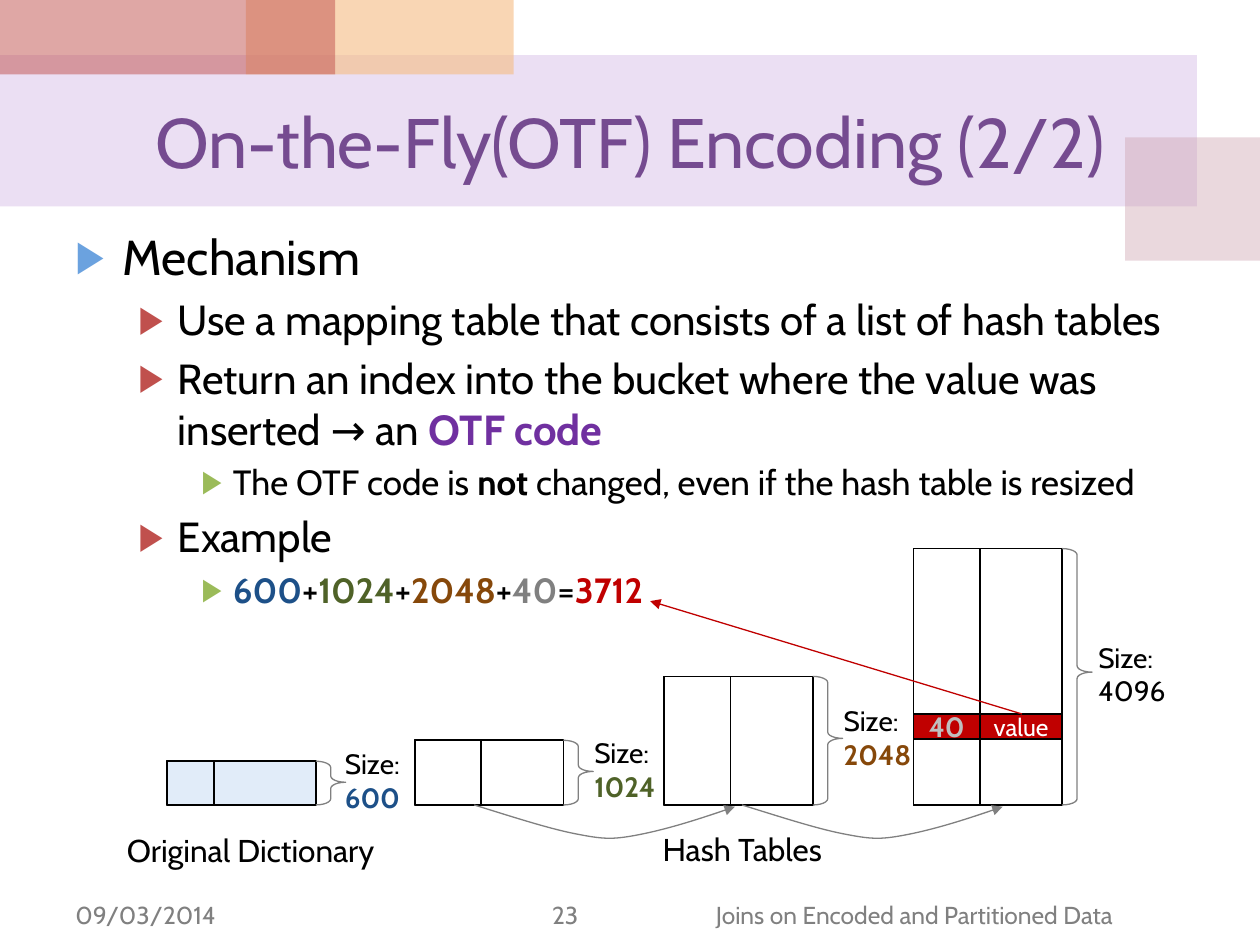
from lxml import etree
from pptx import Presentation
from pptx.dml.color import RGBColor
from pptx.enum.shapes import MSO_CONNECTOR as Connector, MSO_SHAPE as Shape
from pptx.enum.text import MSO_ANCHOR as Anchor, PP_ALIGN as Align
from pptx.oxml import parse_xml
from pptx.oxml.ns import nsdecls, qn
from pptx.util import Pt

FONT = "Cabin"
BLACK = RGBColor(0x00, 0x00, 0x00)
WHITE = RGBColor(0xFF, 0xFF, 0xFF)
GREY = RGBColor(0x80, 0x80, 0x80)
SILVER = RGBColor(0xBF, 0xBF, 0xBF)
PLUM = RGBColor(0x56, 0x2B, 0x71)
PURPLE = RGBColor(0x70, 0x30, 0xA0)
RED = RGBColor(0xC0, 0x00, 0x00)
BLUE = RGBColor(0x1D, 0x50, 0x88)
GREEN = RGBColor(0x4F, 0x62, 0x28)
BROWN = RGBColor(0x86, 0x48, 0x0A)
PALE_BLUE = RGBColor(0xE1, 0xEC, 0xF9)
LILAC = RGBColor(0xBF, 0x98, 0xD8)
ROSE = RGBColor(0xCC, 0x9E, 0xAC)
ORANGE = RGBColor(0xF5, 0xBC, 0x83)
BRICK = RGBColor(0xC0, 0x50, 0x4D)

deck = Presentation()
deck.slide_width, deck.slide_height = Pt(720), Pt(540)
page = deck.slides.add_slide(deck.slide_layouts[5])


def add_box(kind, left, top, width, height, fill=None, line=None, weight=1):
    box = page.shapes.add_shape(kind, Pt(left), Pt(top), Pt(width), Pt(height))
    box.shadow.inherit = False
    if fill is None:
        box.fill.background()
    else:
        box.fill.solid()
        box.fill.fore_color.rgb = fill
    if line is None:
        box.line.fill.background()
    else:
        box.line.color.rgb = line
        box.line.width = Pt(weight)
    return box


def write(frame, paragraphs, size, align=Align.LEFT):
    """Fill a frame; each paragraph is a list of (text, colour, bold) spans."""
    frame.word_wrap = True
    for number, spans in enumerate(paragraphs):
        para = frame.paragraphs[0] if number == 0 else frame.add_paragraph()
        para.alignment = align
        for text, colour, bold in spans:
            span = para.add_run()
            span.text = text
            span.font.name, span.font.size = FONT, Pt(size)
            span.font.color.rgb, span.font.bold = colour, bold


# Translucent background blocks
for left, top, width, height, colour, opacity in [
    (0, 31.5, 684, 86.5, LILAC, 30),
    (643, 78.5, 77, 70.5, ROSE, 40),
    (140.5, 0, 153, 42.5, ORANGE, 60),
    (0, 0, 191.5, 42.5, BRICK, 50),
]:
    block = add_box(Shape.RECTANGLE, left, top, width, height, colour)
    tint = block.fill._xPr.find(qn("a:solidFill"))[0]
    etree.SubElement(tint, qn("a:alpha")).set("val", str(opacity * 1000))

# Title
title = page.shapes.title
title.left, title.top, title.width, title.height = Pt(36), Pt(42.5), Pt(648), Pt(75.5)
title.text_frame.vertical_anchor = Anchor.MIDDLE
write(title.text_frame, [[("On-the-Fly(OTF) Encoding (2/2)", PLUM, False)]], 40, Align.CENTER)

# Bulleted text: level and spans
LEVELS = [  # size, text indent, hanging indent, bullet colour
    (28, 27, 27, "6BA2DF"),
    (24, 58.5, 22.5, "C0504D"),
    (20, 90, 18, "9BBB59"),
]
bullets = [
    (0, [("Mechanism", BLACK, False)]),
    (1, [("Use a mapping table that consists of a list of hash tables", BLACK, False)]),
    (1, [("Return an index into the bucket where the value was inserted → an ", BLACK, False),
         ("OTF code", PURPLE, True)]),
    (2, [("The OTF code is ", BLACK, False), ("not", BLACK, True),
         (" changed, even if the hash table is resized", BLACK, False)]),
    (1, [("Example", BLACK, False)]),
    (2, [("600", BLUE, True), ("+", BLACK, False), ("1024", GREEN, True), ("+", BLACK, False),
         ("2048", BROWN, True), ("+", BLACK, False), ("40", GREY, True), ("=", BLACK, False),
         ("3712", RED, True)]),
]
body = page.shapes.add_textbox(Pt(36), Pt(126), Pt(648), Pt(356.5))
write(body.text_frame, [spans for _, spans in bullets], 28)
for para, (level, _) in zip(body.text_frame.paragraphs, bullets):
    size, indent, hanging, bullet_colour = LEVELS[level]
    para.level = level
    para.space_before = Pt(size * 0.2)
    for span in para.runs:
        span.font.size = Pt(size)
    props = para._p.get_or_add_pPr()
    props.set("marL", str(Pt(indent)))
    props.set("indent", str(-Pt(hanging)))
    for tag, key, value in [("buClr", None, None), ("buSzPct", "val", "90000"),
                            ("buFont", "typeface", "Arial"), ("buChar", "char", "▶")]:
        mark = etree.SubElement(props, qn(f"a:{tag}"))
        if key:
            mark.set(key, value)
        else:
            etree.SubElement(mark, qn("a:srgbClr")).set("val", bullet_colour)

# Dictionary and hash tables, standing on one base line
BASE, TABLE_WIDTH = 460, 85
for left, height, key_width, fill, label_left, entries, colour, bold in [
    (95.5, 25, 27, PALE_BLUE, 190, "600", BLUE, True),
    (237, 37, 38, None, 332.5, "1024", GREEN, True),
    (379.5, 73.5, 38, None, 475, "2048", BROWN, True),
    (522, 146.5, 38, None, 620.5, "4096", BLACK, False),
]:
    top = BASE - height
    add_box(Shape.RECTANGLE, left, top, TABLE_WIDTH, height, fill, BLACK)
    add_box(Shape.RECTANGLE, left, top, key_width, height, fill, BLACK)
    brace = add_box(Shape.RIGHT_BRACE, left + TABLE_WIDTH, top, 17, height, None, GREY, 0.75)
    brace.adjustments[0], brace.adjustments[1] = 0.212, 0.482
    label = page.shapes.add_textbox(Pt(label_left), Pt(top + height / 2 - 24.5), Pt(63), Pt(46))
    write(label.text_frame, [[("Size:", BLACK, False)], [(entries, colour, bold)]], 16)

# Row that holds the encoded value
for left, width, text, size, colour, bold in [
    (522, 38, "40", 16, SILVER, True),
    (560, 47, "value", 14, WHITE, False),
]:
    cell = add_box(Shape.RECTANGLE, left, 408, width, 14.5, RED, BLACK)
    cell.text_frame.vertical_anchor = Anchor.MIDDLE
    write(cell.text_frame, [[(text, colour, bold)]], size, Align.CENTER)
    cell.text_frame.margin_left = cell.text_frame.margin_right = 0

# Curved links between the hash tables
CURVE = [(21, 6.5), (42.5, 13.5), (58, 16.5), (73.5, 19.5), (78.5, 20), (94, 17),
         (109.5, 14), (129, 8), (149, 1)]
arrows = []
for start in (271, 424):
    builder = page.shapes.build_freeform(Pt(start), Pt(BASE))
    builder.add_line_segments([(Pt(start + x), Pt(BASE + y)) for x, y in CURVE], close=False)
    link = builder.convert_to_shape()
    link.shadow.inherit = False
    link.fill.background()
    link.line.color.rgb = GREY
    segments = list(link._element.iter(qn("a:lnTo")))
    for first in range(0, len(segments), 3):
        bezier = parse_xml(f"<a:cubicBezTo {nsdecls('a')}/>")
        segments[first].addprevious(bezier)
        for segment in segments[first:first + 3]:
            bezier.append(segment[0])
            segment.getparent().remove(segment)
    arrows.append(link)

# Arrow from the value to its code
pointer = page.shapes.add_connector(Connector.STRAIGHT, Pt(584), Pt(408), Pt(371.5), Pt(343.5))
pointer.line.color.rgb = RED
etree.SubElement(pointer._element.spPr, qn("a:effectLst"))
for arrow in arrows + [pointer]:
    arrow.line.width = Pt(0.75)
    etree.SubElement(arrow.line._get_or_add_ln(), qn("a:tailEnd")).set("type", "triangle")

# Captions and footer
for left, top, width, text, size, colour, align in [
    (65.5, 471.5, 158, "Original Dictionary", 18, BLACK, Align.LEFT),
    (371.5, 470.5, 173, "Hash Tables", 18, BLACK, Align.LEFT),
    (36, 511, 120, "09/03/2014", 14, GREY, Align.LEFT),
    (293, 511, 60, "23", 14, GREY, Align.CENTER),
    (402, 511, 270, "Joins on Encoded and Partitioned Data", 14, GREY, Align.LEFT),
]:
    note = page.shapes.add_textbox(Pt(left), Pt(top), Pt(width), Pt(size * 1.6))
    write(note.text_frame, [[(text, colour, False)]], size, align)

deck.save("out.pptx")
